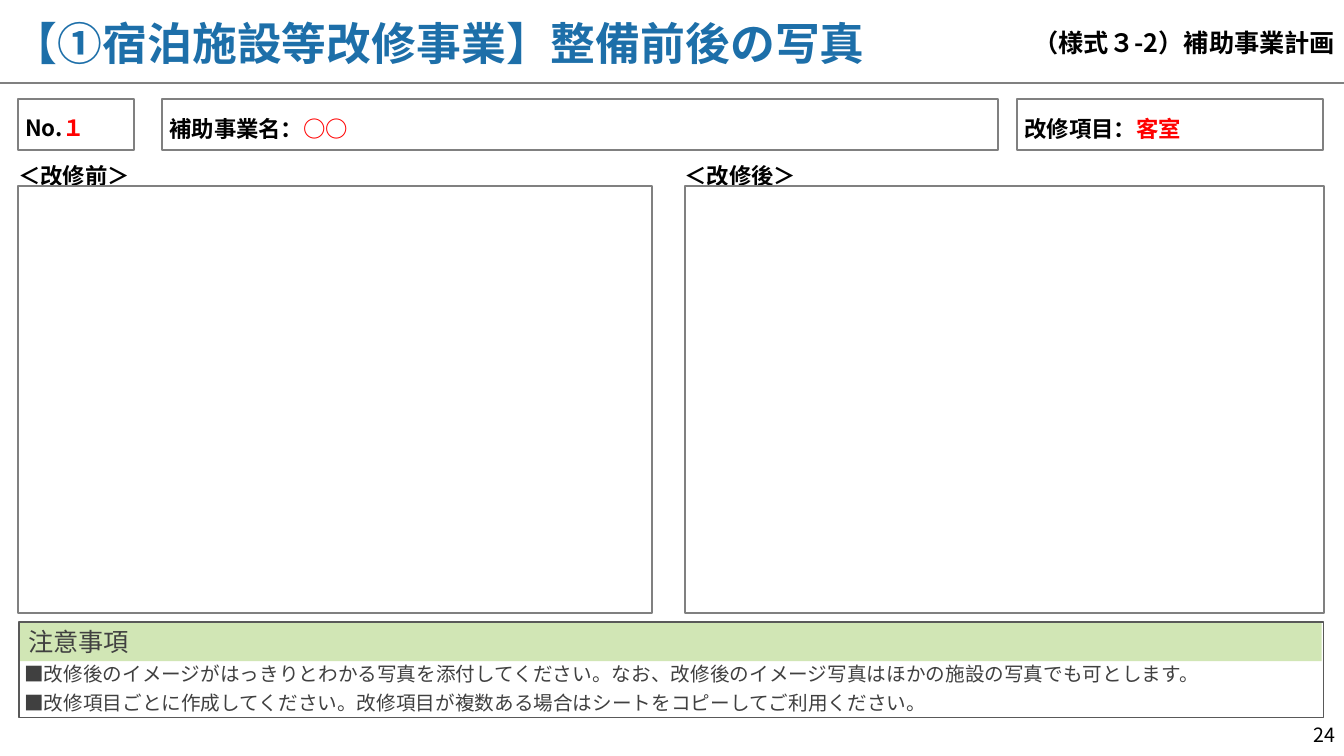
from dataclasses import dataclass

from lxml.etree import SubElement
from pptx import Presentation
from pptx.dml.color import RGBColor
from pptx.enum.shapes import MSO_CONNECTOR as CONN, MSO_SHAPE as SHAPE
from pptx.enum.text import MSO_ANCHOR as ANCHOR, PP_ALIGN as ALIGN
from pptx.oxml.ns import qn
from pptx.util import Inches, Pt


@dataclass(frozen=True)
class Theme:
    font: str = "Noto Sans CJK JP"
    title: str = "1D6FA9"
    ink: str = "000000"
    entry: str = "FF0000"
    note: str = "404040"
    rule: str = "808080"
    note_rule: str = "595959"
    note_head: str = "D1E6B5"
    paper: str = "FFFFFF"
    title_size: int = 32
    head_size: int = 18
    label_size: int = 16
    note_size: int = 14


@dataclass(frozen=True)
class Box:
    left: float
    top: float
    width: float
    height: float

    def emu(self):
        return [Inches(v) for v in (self.left, self.top, self.width, self.height)]


@dataclass(frozen=True)
class Field:
    """A framed form field: black caption, red entry."""
    frame: Box
    text: Box
    caption: str
    entry: str


@dataclass(frozen=True)
class Photo:
    """An empty photo frame with its label."""
    frame: Box
    label: str


T = Theme()
DEFAULT_INSETS = (0.1, 0.05, 0.1, 0.05)
NO_INSETS = (0, 0, 0, 0)

FIELDS = [
    Field(Box(0.18, 0.98, 1.15, 0.51), Box(0.25, 1, 0.88, 0.44), "No.", "１"),
    Field(Box(10.09, 0.98, 3.03, 0.51), Box(10.16, 1.01, 2.01, 0.44), "改修項目：", "客室"),
    Field(Box(1.61, 0.98, 8.29, 0.51), Box(1.68, 1.01, 5.48, 0.44), "補助事業名：", "○○"),
]
PHOTOS = [
    Photo(Box(0.18, 1.85, 6.29, 4.23), "＜改修前＞"),
    Photo(Box(6.79, 1.85, 6.34, 4.23), "＜改修後＞"),
]
NOTES = [
    "■改修後のイメージがはっきりとわかる写真を添付してください。なお、改修後のイメージ写真はほかの施設の写真でも可とします。",
    "■改修項目ごとに作成してください。改修項目が複数ある場合はシートをコピーしてご利用ください。",
]


def rgb(code: str) -> RGBColor:
    return RGBColor.from_string(code)


def write(sp, *paragraphs, size: float, color: str = T.ink, bold: bool = False,
          align=ALIGN.LEFT, anchor=ANCHOR.TOP, insets=DEFAULT_INSETS,
          spacing=None, before: float = 0, after: float = 0):
    """Fill a shape; each paragraph is a string or a list of (text, colour) runs."""
    tf = sp.text_frame
    tf.word_wrap = True
    tf.vertical_anchor = anchor
    tf.margin_left, tf.margin_top, tf.margin_right, tf.margin_bottom = map(Inches, insets)
    for i, runs in enumerate(paragraphs):
        p = tf.add_paragraph() if i else tf.paragraphs[0]
        p.alignment = align
        p.line_spacing = spacing
        p.space_before = Pt(before if i else 0)
        p.space_after = Pt(after)
        for text, run_color in [(runs, color)] if isinstance(runs, str) else runs:
            r = p.add_run()
            r.text = text
            r.font.size, r.font.bold, r.font.name = Pt(size), bold, T.font
            r.font.color.rgb = rgb(run_color)
            # East Asian glyphs take their own typeface
            SubElement(r.font._element, qn("a:ea")).set("typeface", T.font)


def add_text(slide, box: Box, *paragraphs, **fmt):
    sp = slide.shapes.add_textbox(*box.emu())
    write(sp, *paragraphs, **fmt)
    return sp


def add_rect(slide, box: Box, fill: str = "", line: str = "", weight: float = 1.5):
    sp = slide.shapes.add_shape(SHAPE.RECTANGLE, *box.emu())
    sp.shadow.inherit = False
    if fill:
        sp.fill.solid()
        sp.fill.fore_color.rgb = rgb(fill)
    else:
        sp.fill.background()
    if line:
        sp.line.color.rgb = rgb(line)
        sp.line.width = Pt(weight)
    else:
        sp.line.fill.background()
    return sp


def add_rule(slide, top: float, width: float):
    rule = slide.shapes.add_connector(CONN.STRAIGHT, 0, Inches(top), Inches(width), Inches(top))
    rule.line.color.rgb = rgb(T.rule)
    rule.line.width = Pt(1.5)
    SubElement(rule._element.spPr, qn("a:effectLst"))


def main():
    prs = Presentation()
    prs.slide_width, prs.slide_height = Inches(13.33), Inches(7.5)
    slide = prs.slides.add_slide(prs.slide_layouts[6])

    # Header and page number
    add_rule(slide, 0.82, 13.33)
    add_text(slide, Box(0.03, 0.02, 10.59, 0.8), "【①宿泊施設等改修事業】整備前後の写真",
             size=T.title_size, color=T.title, bold=True, anchor=ANCHOR.MIDDLE)
    add_text(slide, Box(8.28, 0.09, 5.06, 0.66), "（様式３-2）補助事業計画",
             size=T.head_size, bold=True, align=ALIGN.RIGHT, anchor=ANCHOR.MIDDLE,
             insets=(0.1, 0.04, 0.1, 0.04))
    add_text(slide, Box(12.67, 7.12, 0.67, 0.38), "24", size=T.note_size, align=ALIGN.RIGHT)

    # Before and after photos
    for photo in PHOTOS:
        add_text(slide, Box(photo.frame.left, 1.48, 4.26, 0.44), photo.label,
                 size=T.label_size, bold=True, insets=NO_INSETS, spacing=1.5)
        add_rect(slide, photo.frame, fill=T.paper, line=T.rule)

    # Form fields
    for field in FIELDS:
        add_rect(slide, field.frame, line=T.rule)
        add_text(slide, field.text, [(field.caption, T.ink), (field.entry, T.entry)],
                 size=T.label_size, bold=True, insets=NO_INSETS, spacing=1.5)

    # Notes
    add_text(slide, Box(0.24, 6.68, 12.99, 0.42), *NOTES, size=T.note_size, color=T.note,
             insets=(0, 0.01, 0, 0), spacing=Pt(8), before=0.9, after=12)
    heading = add_rect(slide, Box(0.18, 6.17, 12.93, 0.39), fill=T.note_head)
    write(heading, "注意事項", size=T.head_size, color=T.note, anchor=ANCHOR.MIDDLE)
    add_rect(slide, Box(0.19, 6.17, 12.94, 0.95), line=T.note_rule, weight=1)

    prs.save("out.pptx")


if __name__ == "__main__":
    main()
